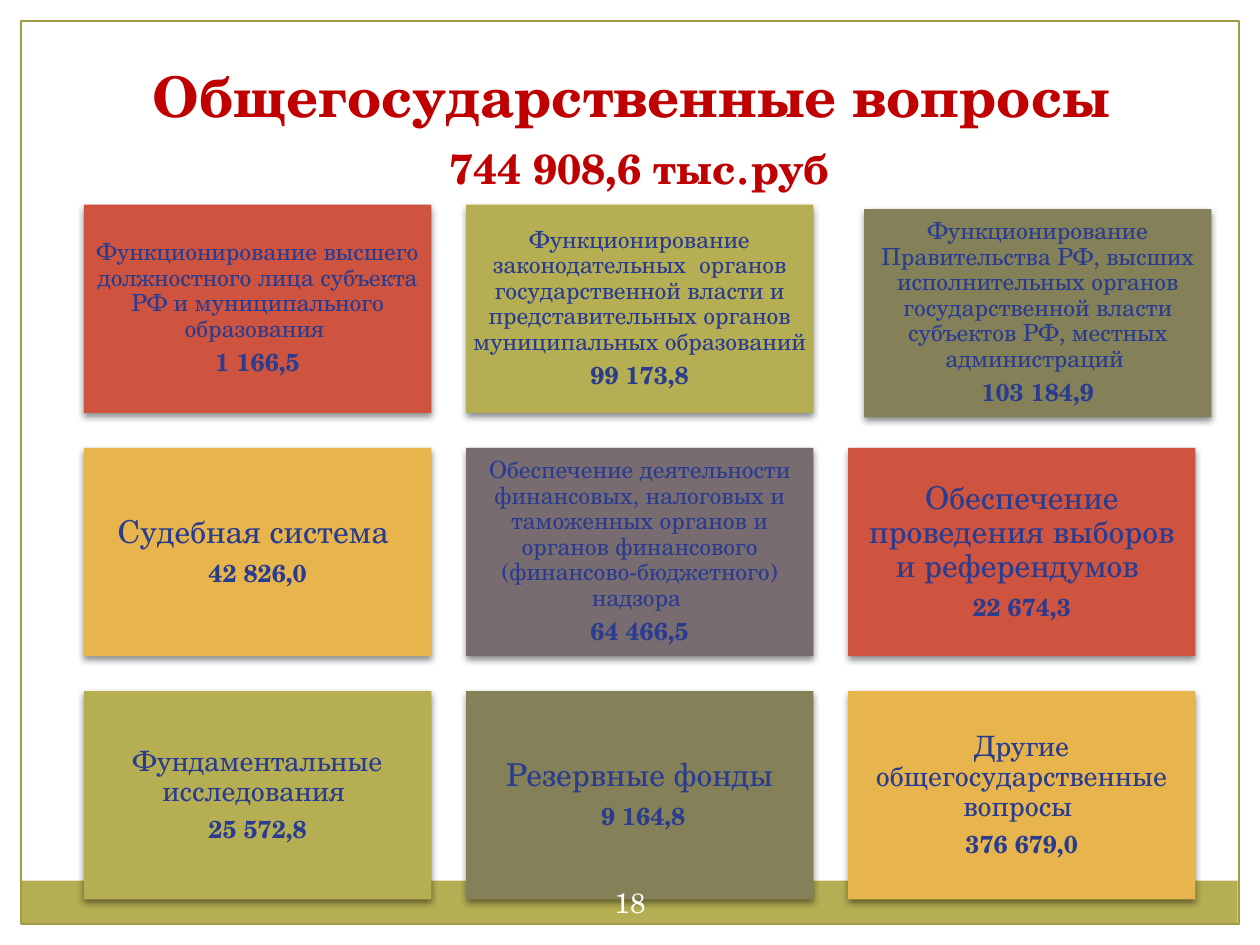
from lxml.etree import SubElement as Sub
from pptx import Presentation
from pptx.dml.color import RGBColor as RGB
from pptx.enum.shapes import MSO_SHAPE as Kind
from pptx.enum.text import MSO_ANCHOR as Anchor, MSO_AUTO_SIZE as Fit, PP_ALIGN as Align
from pptx.oxml.ns import qn
from pptx.util import Pt

FACE = "TeX Gyre Schola"
WHITE = RGB(0xFF, 0xFF, 0xFF)
RED = RGB(0xC0, 0x00, 0x00)
NAVY = RGB(0x29, 0x3C, 0x8F)
EDGE = RGB(0xA0, 0x9A, 0x49)
BRICK = RGB(0xCF, 0x54, 0x3F)
OLIVE = RGB(0xB5, 0xAE, 0x53)
MOSS = RGB(0x84, 0x80, 0x58)
GOLD = RGB(0xE8, 0xB5, 0x4D)
PLUM = RGB(0x78, 0x6C, 0x71)

# Card grid, in points
LEFT, TOP = 48, 117
WIDE, HIGH = 198.5, 119
STEP_X, STEP_Y = 218.3, 139
SHIFT = {2: (9.2, 2.6)}  # the third card sits off the grid

# Name, name size, sum, fill
CARDS = [
    ("Функционирование высшего должностного лица субъекта РФ "
     "и муниципального образования ", 13.5, "1 166,5", BRICK),
    ("Функционирование законодательных  органов государственной власти "
     "и представительных органов муниципальных образований ", 13.5, "99 173,8", OLIVE),
    ("Функционирование Правительства РФ, высших исполнительных органов "
     "государственной власти субъектов РФ, местных администраций ",
     13.5, "103 184,9", MOSS),
    ("Судебная система ", 18, "42 826,0", GOLD),
    ("Обеспечение деятельности финансовых, налоговых и таможенных органов "
     "и органов финансового (финансово-бюджетного) надзора ", 13.5, "64 466,5", PLUM),
    ("Обеспечение проведения выборов и референдумов ", 18, "22 674,3", BRICK),
    ("Фундаментальные исследования ", 16, "25 572,8", OLIVE),
    ("Резервные фонды", 18, " 9 164,8", MOSS),
    ("Другие общегосударственные вопросы ", 16, "376 679,0", GOLD),
]


def style(font, size, color, bold=False):
    font.name, font.size, font.bold = FACE, Pt(size), bold
    font.color.rgb = color


def inset(frame, pad):
    frame.margin_left = frame.margin_right = Pt(pad)
    frame.margin_top = frame.margin_bottom = Pt(pad)


def add_rect(slide, x, y, w, h, fill=None, line=None):
    rect = slide.shapes.add_shape(Kind.RECTANGLE, Pt(x), Pt(y), Pt(w), Pt(h))
    rect.shadow.inherit = False
    if fill is None:
        rect.fill.background()
    else:
        rect.fill.solid()
        rect.fill.fore_color.rgb = fill
    if line is None:
        rect.line.fill.background()
    else:
        rect.line.color.rgb = line
        rect.line.width = Pt(0.75)
    return rect


def add_shade(shape):
    effects = shape._element.spPr.find(qn("a:effectLst"))
    shade = Sub(effects, qn("a:outerShdw"), blurRad=str(Pt(4)), dist=str(Pt(2)),
                dir="5400000", rotWithShape="0")
    color = Sub(shade, qn("a:srgbClr"), val="000000")
    Sub(color, qn("a:alpha"), val="45000")


def add_card(slide, x, y, name, size, total, fill):
    card = add_rect(slide, x, y, WIDE, HIGH, fill)
    add_shade(card)
    frame = card.text_frame
    frame.word_wrap = True
    frame.vertical_anchor = Anchor.MIDDLE
    inset(frame, 4 if size < 16 else 5)
    frame.text = f"{name}\n{total}"
    for para, pts, bold in zip(frame.paragraphs, (size, 14), (False, True)):
        para.alignment = Align.CENTER
        para.line_spacing = 0.9
        para.space_after = Pt(round(pts * 0.35, 1))
        style(para.font, pts, NAVY, bold)


def set_title(slide):
    title = slide.shapes.title
    title.left, title.top, title.width, title.height = Pt(36.7), Pt(31.7), Pt(657.4), Pt(85)
    frame = title.text_frame
    frame.word_wrap = True
    frame.auto_size = Fit.SHAPE_TO_FIT_TEXT
    frame.vertical_anchor = Anchor.TOP
    frame.text = "Общегосударственные вопросы "
    head, sub = frame.paragraphs[0], frame.add_paragraph()
    head.alignment = sub.alignment = Align.CENTER
    style(head.font, 32, RED, True)
    for text, size, bold in (("744 908,6 тыс", 24, True), (".", 32, False), ("руб", 24, True)):
        run = sub.add_run()
        run.text = text
        style(run.font, size, RED, bold)


def add_page(slide, text):
    box = slide.shapes.add_textbox(Pt(336), Pt(498.2), Pt(48), Pt(34.6))
    frame = box.text_frame
    frame.word_wrap = True
    frame.vertical_anchor = Anchor.MIDDLE
    inset(frame, 3.6)
    frame.text = text
    para = frame.paragraphs[0]
    para.alignment = Align.CENTER
    style(para.font, 16, WHITE)


def main():
    deck = Presentation()
    deck.slide_width, deck.slide_height = Pt(720), Pt(540)
    slide = deck.slides.add_slide(deck.slide_layouts[5])

    # Bottom band and page frame
    add_rect(slide, 11.8, 503.3, 695.5, 24.5, OLIVE)
    add_rect(slide, 12, 12, 696, 516, line=EDGE)

    set_title(slide)

    # Three by three cards
    for i, card in enumerate(CARDS):
        row, col = divmod(i, 3)
        dx, dy = SHIFT.get(i, (0, 0))
        add_card(slide, LEFT + col * STEP_X + dx, TOP + row * STEP_Y + dy, *card)

    add_page(slide, "18")
    deck.save("out.pptx")


if __name__ == "__main__":
    main()
